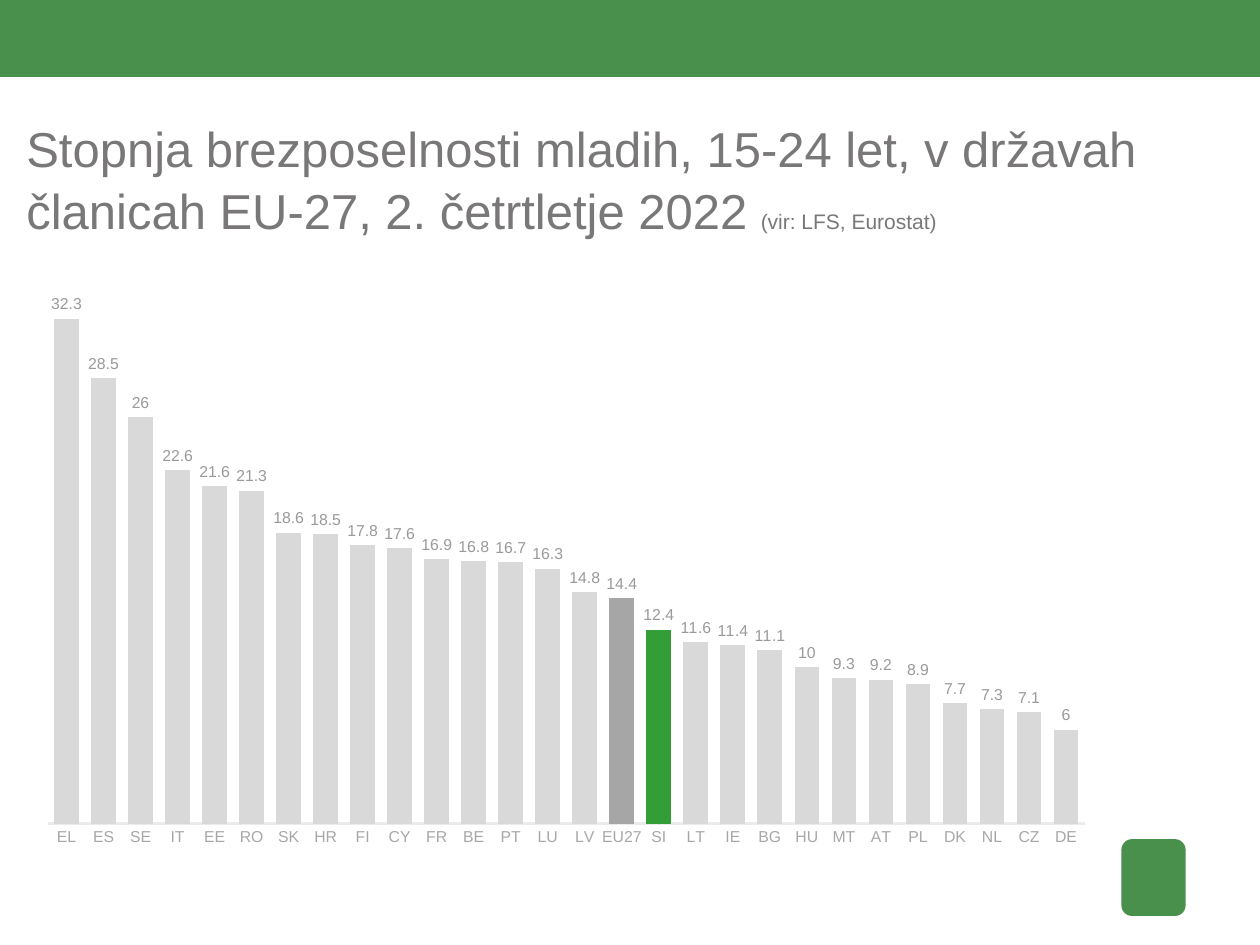
from lxml import etree
from pptx import Presentation
from pptx.chart.data import CategoryChartData
from pptx.dml.color import RGBColor
from pptx.enum.chart import XL_CHART_TYPE, XL_LABEL_POSITION, XL_TICK_LABEL_POSITION, XL_TICK_MARK
from pptx.enum.shapes import MSO_SHAPE
from pptx.enum.text import MSO_ANCHOR
from pptx.oxml import parse_xml
from pptx.oxml.ns import nsdecls, qn
from pptx.util import Inches, Pt

COLUMN = XL_CHART_TYPE.COLUMN_CLUSTERED
OUTSIDE = XL_LABEL_POSITION.OUTSIDE_END
NO_LABELS = XL_TICK_LABEL_POSITION.NONE
NO_TICKS = XL_TICK_MARK.NONE
RECT = MSO_SHAPE.RECTANGLE
ROUNDED = MSO_SHAPE.ROUNDED_RECTANGLE
TOP = MSO_ANCHOR.TOP

FONT = "Arial"
GREEN = RGBColor(0x49, 0x90, 0x4D)
TEXT = RGBColor(0x79, 0x77, 0x77)
LABEL = RGBColor(0x9B, 0x99, 0x99)
AXIS = RGBColor(0xA8, 0xA7, 0xA7)
RULE = RGBColor(0xEB, 0xEB, 0xEB)
BAR = RGBColor(0xD9, 0xD9, 0xD9)
AVERAGE = RGBColor(0xA6, 0xA6, 0xA6)
HOME = RGBColor(0x33, 0x9E, 0x35)
WHITE = RGBColor(0xFF, 0xFF, 0xFF)

RATES = {
    "EL": 32.3, "ES": 28.5, "SE": 26, "IT": 22.6, "EE": 21.6, "RO": 21.3, "SK": 18.6,
    "HR": 18.5, "FI": 17.8, "CY": 17.6, "FR": 16.9, "BE": 16.8, "PT": 16.7, "LU": 16.3,
    "LV": 14.8, "EU27": 14.4, "SI": 12.4, "LT": 11.6, "IE": 11.4, "BG": 11.1, "HU": 10,
    "MT": 9.3, "AT": 9.2, "PL": 8.9, "DK": 7.7, "NL": 7.3, "CZ": 7.1, "DE": 6,
}
ACCENTS = {"EU27": AVERAGE, "SI": HOME}


def paint(part, color):
    part.format.fill.solid()
    part.format.fill.fore_color.rgb = color


def style(font, size, color):
    font.name, font.size = FONT, Pt(size)
    font.color.rgb = color


class Page:
    def __init__(self, slide):
        self.slide = slide

    def shape(self, kind, *box):
        shape = self.slide.shapes.add_shape(kind, *map(Inches, box))
        shape.shadow.inherit = False
        shape.fill.solid()
        shape.fill.fore_color.rgb = GREEN
        shape.line.fill.background()

    def title(self, runs, *box):
        frame = self.slide.shapes.add_textbox(*map(Inches, box)).text_frame
        frame.word_wrap = True
        frame.vertical_anchor = TOP
        frame.margin_left = frame.margin_right = 0
        frame.margin_top = frame.margin_bottom = 0
        line = frame.paragraphs[0]
        line.line_spacing = 1.05
        for text, size in runs:
            run = line.add_run()
            run.text = text
            style(run.font, size, TEXT)

    def chart(self, rates, accents, *box):
        data = CategoryChartData()
        data.categories = list(rates)
        data.add_series("Series 1", list(rates.values()))
        chart = self.slide.shapes.add_chart(COLUMN, *map(Inches, box), data).chart
        chart.has_legend = chart.has_title = False
        style(chart.font, 10, TEXT)

        plot = chart.plots[0]
        plot.gap_width, plot.overlap = 50, -27
        plot.vary_by_categories = False
        series = plot.series[0]
        paint(series, BAR)
        for i, name in enumerate(rates):
            if name in accents:
                paint(series.points[i], accents[name])

        labels = series.data_labels
        labels.show_value = True
        labels.position = OUTSIDE
        labels.number_format, labels.number_format_is_linked = "General", False
        style(labels.font, 9, LABEL)

        cats, vals = chart.category_axis, chart.value_axis
        for axis in (cats, vals):
            axis.major_tick_mark = axis.minor_tick_mark = NO_TICKS
            axis.has_major_gridlines = False
            style(axis.tick_labels.font, 9, AXIS)
        cats.format.line.color.rgb = RULE
        cats.format.line.width = Pt(1.5)
        vals.format.line.fill.background()
        vals.tick_label_position = NO_LABELS
        vals.minimum_scale, vals.maximum_scale = 0, 35
        self.layout(chart, x=0.02, y=0.02, w=0.96, h=0.92)

    def layout(self, chart, **parts):
        """Fix the inner plot area as fractions of the chart."""
        area = chart._chartSpace.chart.plotArea
        for old in area.findall(qn("c:layout")):
            area.remove(old)
        layout = parse_xml(f"<c:layout {nsdecls('c')}><c:manualLayout/></c:layout>")
        manual = layout[0]
        settings = {"layoutTarget": "inner", "xMode": "edge", "yMode": "edge", **parts}
        for tag, value in settings.items():
            etree.SubElement(manual, qn(f"c:{tag}")).set("val", str(value))
        area.insert(0, layout)


def main():
    deck = Presentation()
    deck.slide_width, deck.slide_height = Inches(10), Inches(7.5)
    slide = deck.slides.add_slide(deck.slide_layouts[6])
    slide.background.fill.solid()
    slide.background.fill.fore_color.rgb = WHITE

    page = Page(slide)
    page.shape(RECT, 0, -0.01, 10, 0.62)
    page.shape(ROUNDED, 8.9, 6.66, 0.51, 0.61)
    page.title([
        ("Stopnja brezposelnosti mladih, 15-24 let, v državah članicah EU-27, "
         "2. četrtletje 2022 ", 28),
        ("(vir: LFS, Eurostat)", 12),
    ], 0.21, 0.92, 9.26, 0.71)
    page.chart(RATES, ACCENTS, 0.21, 2.1, 8.57, 4.72)
    deck.save("out.pptx")


if __name__ == "__main__":
    main()
